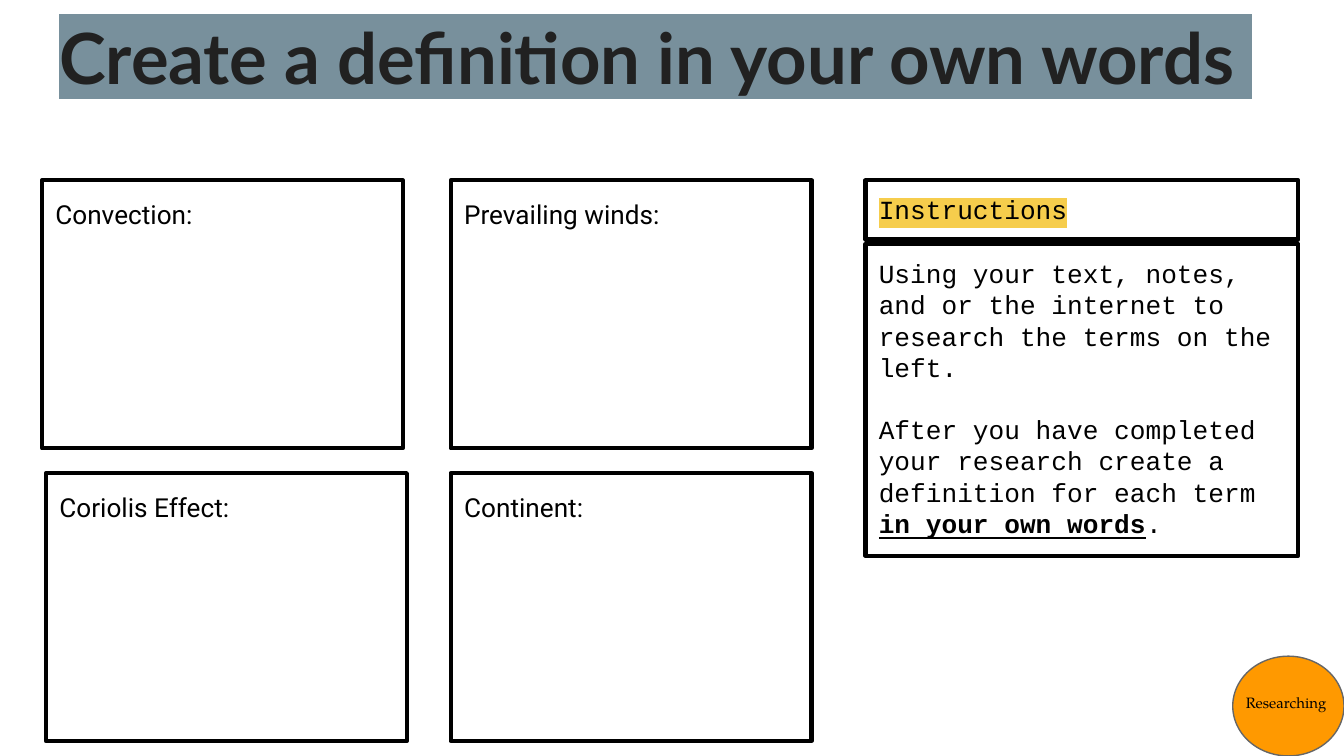
from pptx import Presentation
from pptx import util as u
from pptx.dml.color import RGBColor
from pptx.enum import shapes, text
from pptx.oxml.ns import qn
from lxml import etree


def tint(code):
    """Turn a hex string into a colour."""
    return RGBColor.from_string(code)


def sub(node, tag, **attrs):
    """Append a DrawingML child to a node."""
    return etree.SubElement(node, qn("a:" + tag), **attrs)


class Board:
    """Holds the style and the slide; lengths are percent of its size."""

    ink, edge = "000000", 2.25
    plain, mono = ("Roboto", 14), ("Courier New", 14)

    def __init__(self, wide, high):
        """Open a deck with one title and four body holders."""
        self.deck = Presentation()
        self.deck.slide_width = u.Inches(wide)
        self.deck.slide_height = u.Inches(high)
        self.slide = self.deck.slides.add_slide(self.deck.slide_layouts[4])
        self.slots = list(self.slide.placeholders)

    def area(self, box):
        """Turn percent shares into slide lengths."""
        wide, high = self.deck.slide_width, self.deck.slide_height
        return [int(part * full / 100) for part, full in zip(box, (wide, high) * 2)]

    def place(self, shape, box):
        """Move a holder to its box."""
        shape.left, shape.top, shape.width, shape.height = self.area(box)

    def frame(self, shape, fit=text.MSO_AUTO_SIZE.NONE):
        """Set insets, wrap and anchor; return the text frame."""
        body = shape.text_frame
        body.word_wrap = True
        body.auto_size = fit
        body.vertical_anchor = text.MSO_ANCHOR.TOP
        body.margin_left = body.margin_right = u.Inches(0.1)
        body.margin_top = body.margin_bottom = u.Inches(0.1)
        body.paragraphs[0].alignment = text.PP_ALIGN.LEFT
        return body

    def run(self, para, words, face, bold=False, line=False, ink=ink, mark=None):
        """Add one styled run, with a highlight if asked."""
        bit = para.add_run()
        bit.text = words
        font = bit.font
        font.size, font.bold, font.underline = u.Pt(face[1]), bold, line
        font.color.rgb = tint(ink)
        if mark:
            glow = sub(font._element, "highlight")
            sub(glow, "srgbClr", val=mark)
        font.name = face[0]

    def rim(self, shape):
        """Draw the heavy outline with round corners."""
        shape.line.color.rgb = tint(self.ink)
        shape.line.width = u.Pt(self.edge)
        sub(shape.line._get_or_add_ln(), "round")

    def title(self, words, box):
        """Fill the title holder."""
        shape = self.slots[0]
        self.place(shape, box)
        para = self.frame(shape).paragraphs[0]
        self.run(para, words, ("Lato", 37.8), True, ink="212121", mark="78909C")

    def term(self, slot, words, box):
        """Fill a body holder with a term to define."""
        shape = self.slots[slot]
        self.place(shape, box)
        self.rim(shape)
        para = self.frame(shape).paragraphs[0]
        para.line_spacing, para.space_before = 1.15, u.Pt(28)
        props = para._p.get_or_add_pPr()
        props.set("marL", "0")
        props.set("indent", "0")
        sub(props, "buNone")
        self.run(para, words, self.plain)

    def panel(self, paras, box):
        """Add an outlined box of typed paragraphs."""
        shape = self.slide.shapes.add_shape(
            shapes.MSO_SHAPE.RECTANGLE, *self.area(box))
        shape.shadow.inherit = False
        shape.fill.background()
        self.rim(shape)
        body = self.frame(shape, text.MSO_AUTO_SIZE.SHAPE_TO_FIT_TEXT)
        for num, runs in enumerate(paras):
            para = body.add_paragraph() if num else body.paragraphs[0]
            para.alignment = text.PP_ALIGN.LEFT
            para.space_before = u.Pt(16.5 if num else 0)
            for words, style in runs:
                self.run(para, words, self.mono, **style)

    def badge(self, words, disc, box):
        """Add a round badge and its label."""
        shape = self.slide.shapes.add_shape(
            shapes.MSO_SHAPE.OVAL, *self.area(disc))
        shape.shadow.inherit = False
        shape.fill.solid()
        shape.fill.fore_color.rgb = tint("FF9900")
        shape.line.color.rgb = tint("666666")
        shape.line.width = u.Pt(0.75)
        label = self.slide.shapes.add_textbox(*self.area(box))
        para = self.frame(label).paragraphs[0]
        self.run(para, words, ("TeX Gyre Pagella", 8))


def main():
    """Build the slide."""
    board = Board(10, 10 * 9 / 16)
    board.title("Create a definition in your own words ", (3.4, 0, 93.2, 15.64))
    top, low = 23.86, 62.58
    terms = [("Coriolis Effect:", 3.42, low), ("Convection:", 3.12, top),
             ("Continent:", 33.53, low), ("Prevailing winds:", 33.53, top)]
    for slot, (words, left, row) in enumerate(terms, 1):
        board.term(slot, words, (left, row, 26.85, 35.45))
    side, wide = 64.4, 32.2
    board.panel([[("Instructions", {"mark": "F6CD4C"})]], (side, top, wide, 7.82))
    board.panel([
        [("Using your text, notes, and or the internet to research "
          "the terms on the left.", {})],
        [("After you have completed your research create a definition "
          "for each term ", {}),
         ("in your own words", {"bold": True, "line": True}),
         (".", {})],
    ], (side, 32.24, wide, 41.3))
    board.badge("Researching", (91.72, 86.8, 8.28, 13.2), (91.72, 90, 8.28, 5.33))
    board.deck.save("out.pptx")


if __name__ == "__main__":
    main()
